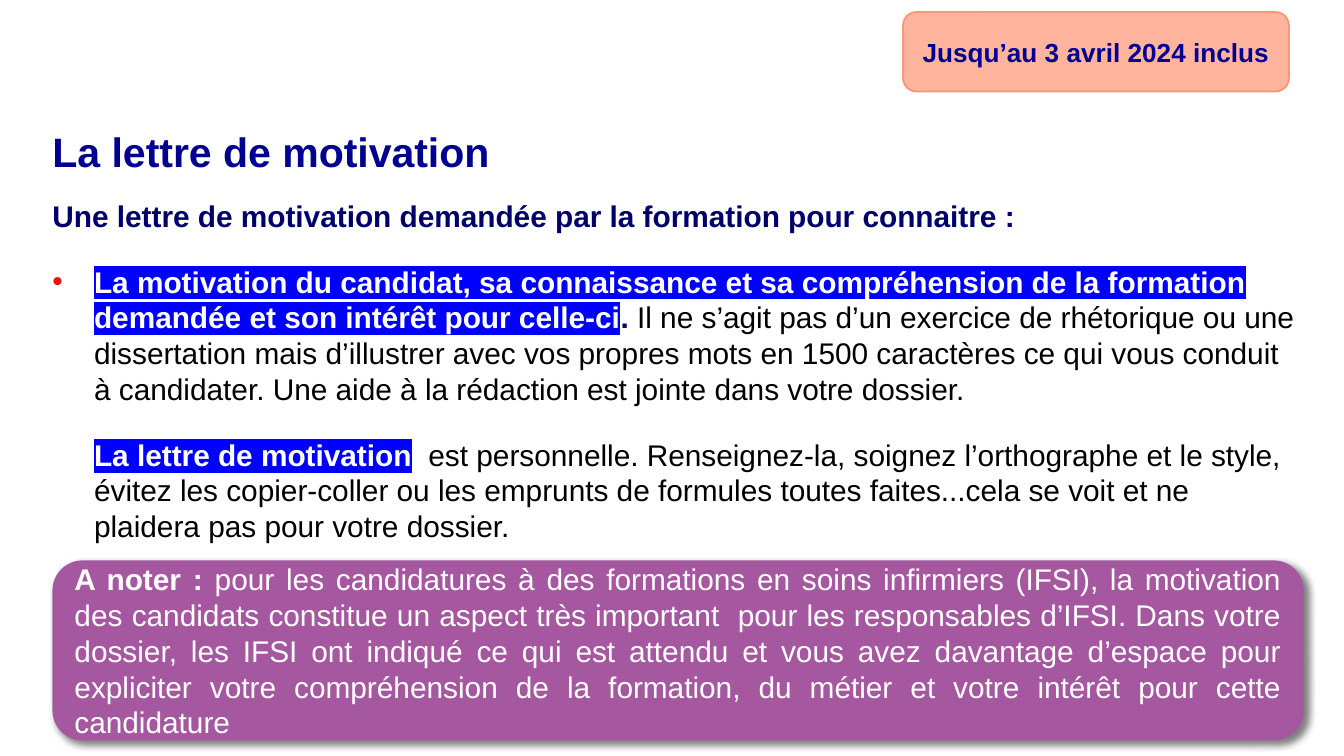
"""Build the slide about the cover letter."""
from dataclasses import dataclass
from typing import Optional

from lxml.etree import SubElement
from pptx import Presentation
from pptx.dml.color import RGBColor
from pptx.enum.shapes import MSO_SHAPE as Shape
from pptx.enum.text import MSO_ANCHOR as Anchor, MSO_AUTO_SIZE as AutoSize, PP_ALIGN as Align
from pptx.oxml.ns import qn
from pptx.util import Inches, Pt

NAVY, DARK_NAVY, BLUE = "000091", "00006D", "0000FF"
WHITE, BLACK, RED = "FFFFFF", "000000", "EC130E"
PURPLE, SALMON = "A558A0", "FF9575"
SLIDE_WIDTH = 10
SLIDE_HEIGHT = SLIDE_WIDTH * 9 / 16
LEFT, BODY_WIDTH, HANGING = 0.39, 9.31, 0.31


@dataclass
class Span:
    text: str
    color: str
    bold: bool = False
    highlight: Optional[str] = None
    size: float = 16


@dataclass
class Block:
    spans: list[Span]
    format: dict
    margin: float = 0
    bullet: Optional[str] = None


@dataclass
class Box:
    left: float
    top: float
    width: float
    height: float
    fill: str
    block: Block
    line: Optional[str] = None
    opacity: int = 100
    shadow: bool = False


def rgb(color: str) -> RGBColor:
    """Turn a hex string into a colour."""
    return RGBColor.from_string(color)


def apply(target, values: dict) -> None:
    """Set each attribute of the target from a dict."""
    for name, value in values.items():
        setattr(target, name, value)


def add_color(parent, color: str, opacity: int = 100) -> None:
    """Add a colour element, with its opacity, to an XML parent."""
    element = SubElement(parent, qn("a:srgbClr"), val=color)
    if opacity < 100:
        SubElement(element, qn("a:alpha"), val=str(opacity * 1000))


def add_span(paragraph, span: Span) -> None:
    """Add one formatted run to a paragraph."""
    run = paragraph.add_run()
    run.text = span.text
    apply(run.font, {"name": "Arial", "size": Pt(span.size), "bold": span.bold})
    run.font.color.rgb = rgb(span.color)
    if span.highlight:
        properties = run._r.get_or_add_rPr()
        highlight = SubElement(properties, qn("a:highlight"))
        add_color(highlight, span.highlight)
        properties.find(qn("a:solidFill")).addnext(highlight)


def set_indent(paragraph, block: Block) -> None:
    """Give a paragraph its left margin and its optional hanging bullet."""
    properties = paragraph._p.get_or_add_pPr()
    properties.set("marL", str(Inches(block.margin)))
    properties.set("indent", str(-Inches(block.margin) if block.bullet else 0))
    if block.bullet:
        add_color(SubElement(properties, qn("a:buClr")), RED)
        SubElement(properties, qn("a:buFont"), typeface="Arial")
        SubElement(properties, qn("a:buChar"), char=block.bullet)


def write(frame, blocks: list[Block], **values) -> None:
    """Fill a text frame with paragraphs."""
    apply(frame, {"word_wrap": True, "auto_size": AutoSize.NONE, **values})
    for index, block in enumerate(blocks):
        paragraph = frame.add_paragraph() if index else frame.paragraphs[0]
        set_indent(paragraph, block)
        apply(paragraph, block.format)
        for span in block.spans:
            add_span(paragraph, span)


def add_box(slide, box: Box) -> None:
    """Draw a rounded box with its text."""
    bounds = map(Inches, (box.left, box.top, box.width, box.height))
    shape = slide.shapes.add_shape(Shape.ROUNDED_RECTANGLE, *bounds)
    shape.shadow.inherit = False
    shape.fill.solid()
    shape.fill.fore_color.rgb = rgb(box.fill)
    properties = shape._element.spPr
    if box.opacity < 100:
        color = properties.find(qn("a:solidFill")).find(qn("a:srgbClr"))
        SubElement(color, qn("a:alpha"), val=str(box.opacity * 1000))
    if box.line:
        shape.line.color.rgb = rgb(box.line)
        shape.line.width = Pt(1)
    else:
        shape.line.fill.background()
    if box.shadow:
        shadow = SubElement(properties.find(qn("a:effectLst")), qn("a:outerShdw"),
                            blurRad=str(Pt(4)), dist=str(Pt(3)), dir=str(45 * 60000),
                            algn="tl", rotWithShape="0")
        add_color(shadow, BLACK, 50)
    write(shape.text_frame, [box.block], vertical_anchor=Anchor.MIDDLE)


TITLE = Block([Span("La lettre de motivation", NAVY, True, size=22)],
              {"alignment": Align.LEFT, "line_spacing": 0.9, "space_before": Pt(0)})
GAP = {"alignment": Align.LEFT, "space_after": Pt(16)}
BODY = [
    Block([Span("Une lettre de motivation demandée par la formation pour connaitre :", DARK_NAVY, True)], GAP),
    Block([
        Span("La motivation du candidat, sa connaissance et sa compréhension de la formation "
             "demandée et son intérêt pour celle-ci", WHITE, True, BLUE),
        Span(". ", DARK_NAVY, True),
        Span("Il ne s’agit pas d’un exercice de rhétorique ou une dissertation mais d’illustrer "
             "avec vos propres mots en 1500 caractères ce qui vous conduit à candidater. "
             "Une aide à la rédaction est jointe dans votre dossier.", BLACK),
    ], GAP, HANGING, "•"),
    Block([
        Span("La lettre de motivation", WHITE, True, BLUE),
        Span("  est personnelle. Renseignez-la, soignez l’orthographe et le style, évitez les "
             "copier-coller ou les emprunts de formules toutes faites...cela se voit et ne "
             "plaidera pas pour votre dossier.", BLACK),
    ], GAP, HANGING),
]
NOTE = Block([
    Span("A noter : ", WHITE, True),
    Span("pour les candidatures à des formations en soins infirmiers (IFSI), la motivation des "
         "candidats constitue un aspect très important  pour les responsables d’IFSI. Dans votre "
         "dossier, les IFSI ont indiqué ce qui est attendu et vous avez davantage d’espace pour "
         "expliciter votre compréhension de la formation, du métier et votre intérêt pour cette "
         "candidature", WHITE),
], {"alignment": Align.JUSTIFY})
DEADLINE = Block([Span("Jusqu’au 3 avril 2024 inclus", NAVY, True, size=14)],
                 {"alignment": Align.CENTER})
BOXES = [
    Box(LEFT, 4.17, BODY_WIDTH, 1.34, PURPLE, NOTE, shadow=True),
    Box(6.72, 0.09, 2.87, 0.59, SALMON, DEADLINE, line=SALMON, opacity=70),
]


def main() -> None:
    """Build and save the presentation."""
    presentation = Presentation()
    apply(presentation, {"slide_width": Inches(SLIDE_WIDTH), "slide_height": Inches(SLIDE_HEIGHT)})
    slide = presentation.slides.add_slide(presentation.slide_layouts[5])
    flush = {f"margin_{side}": 0 for side in ("left", "top", "right", "bottom")}
    flush["vertical_anchor"] = Anchor.TOP
    title = slide.shapes.title
    apply(title, {"left": Inches(LEFT), "top": Inches(0.98),
                  "width": Inches(9.21), "height": Inches(0.79)})
    write(title.text_frame, [TITLE], **flush)
    body = slide.shapes.add_textbox(*map(Inches, (LEFT, 1.47, BODY_WIDTH, 3.54)))
    write(body.text_frame, BODY, **flush)
    for box in BOXES:
        add_box(slide, box)
    presentation.save("out.pptx")


if __name__ == "__main__":
    main()
